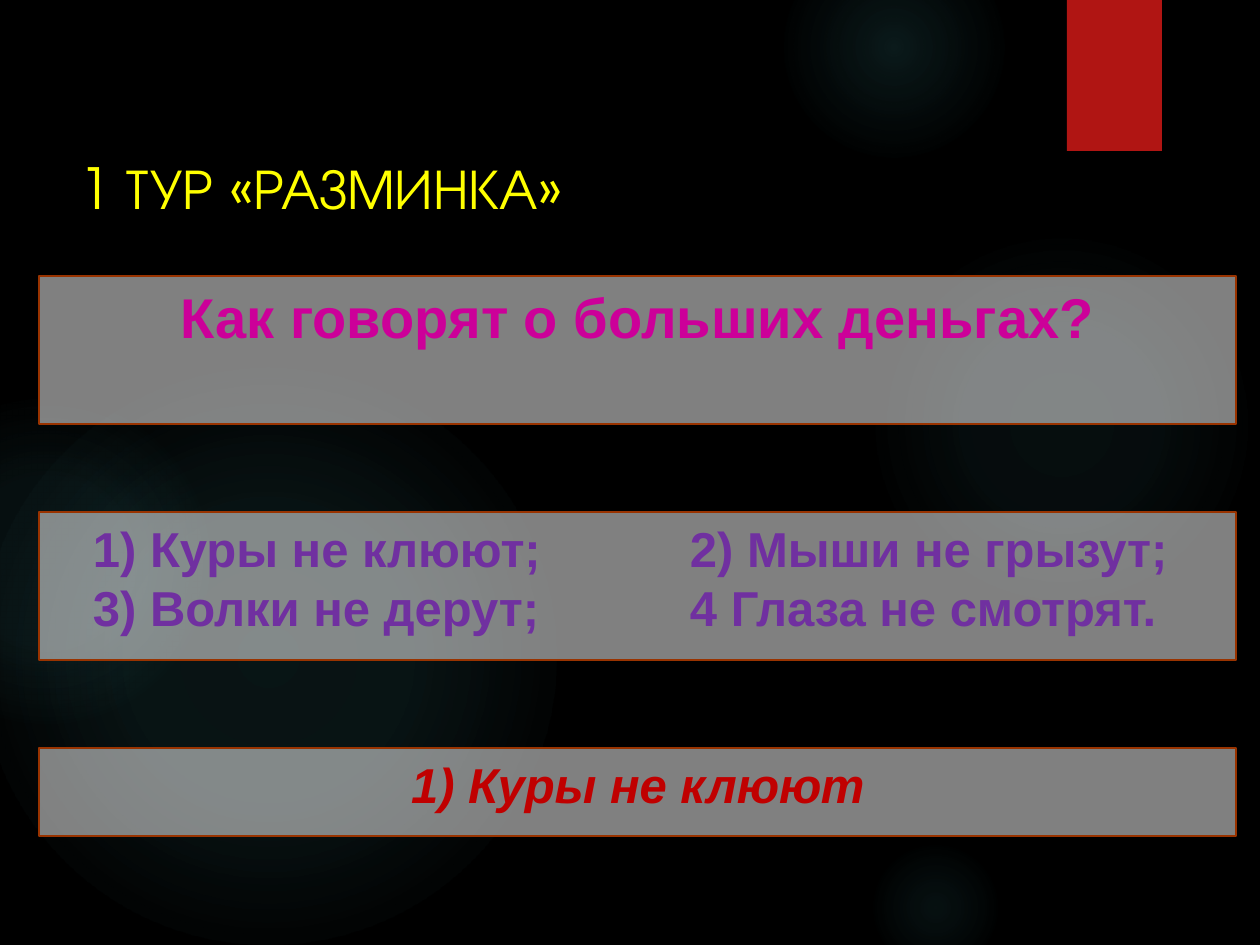
from typing import NamedTuple

from lxml import etree
from pptx import Presentation, util as u
from pptx.dml.color import RGBColor
from pptx.enum import shapes, text
from pptx.oxml.ns import qn

PX = u.Inches(1) // 126
PANEL_LEFT, PANEL_TOP, PANEL_WIDTH, PANEL_PITCH = 39, 276, 1197, 236
GLOW_COLOR = "50B9C1"


class Glow(NamedTuple):
    left: int
    top: int
    size: int
    stops: tuple[tuple[int, int], ...]  # (position %, opacity %)


class Panel(NamedTuple):
    lines: tuple[str, ...]
    height: int
    color: str
    size: int
    align: text.PP_ALIGN = text.PP_ALIGN.CENTER
    italic: bool = False
    inset: int = 13
    tab: int = 0


GLOWS = (
    Glow(868, 231, 388, ((0, 7), (36, 6), (69, 0))),
    Glow(784, -63, 220, ((0, 14), (36, 7), (73, 0))),
    Glow(868, 840, 136, ((0, 9), (36, 5), (66, 0))),
    Glow(-21, 368, 577, ((0, 11), (36, 10), (75, 0))),
    Glow(-116, 399, 325, ((0, 8), (36, 8), (72, 0))),
)
PANELS = (
    Panel(("Как говорят о больших деньгах?",), 148, "CC0099", 32),
    Panel(("1) Куры не клюют;\t2) Мыши не грызут;",
           "3) Волки не дерут;\t4 Глаза не смотрят."),
          148, "7030A0", 28, text.PP_ALIGN.LEFT, inset=54, tab=597),
    Panel(("1) Куры не клюют",), 88, "C00000", 28, italic=True),
)


def rgb(color: str) -> RGBColor:
    return RGBColor.from_string(color)


def add(parent, tag: str, **attributes):
    """Append a DrawingML child element."""
    values = {name: str(value) for name, value in attributes.items()}
    return etree.SubElement(parent, qn(f"a:{tag}"), values)


def add_color(parent, color: str, opacity: int) -> None:
    add(add(parent, "srgbClr", val=color), "alpha", val=opacity * 1000)


def add_shape(page, kind, left: int, top: int, width: int, height: int):
    shape = page.shapes.add_shape(
        kind, left * PX, top * PX, width * PX, height * PX)
    shape.shadow.inherit = False
    return shape


def draw_glow(page, glow: Glow) -> None:
    shape = add_shape(page, shapes.MSO_SHAPE.OVAL,
                      glow.left, glow.top, glow.size, glow.size)
    shape.line.fill.background()
    shape.fill.background()
    properties = shape._element.spPr
    gradient = etree.Element(qn("a:gradFill"), rotWithShape="1")
    stops = add(gradient, "gsLst")
    for position, opacity in glow.stops:
        add_color(add(stops, "gs", pos=position * 1000), GLOW_COLOR, opacity)
    center = add(gradient, "path", path="circle")
    add(center, "fillToRect", l=50000, t=50000, r=50000, b=50000)
    properties.replace(properties.find(qn("a:noFill")), gradient)


def draw_ribbon(page) -> None:
    ribbon = add_shape(page, shapes.MSO_SHAPE.RECTANGLE, 1067, 0, 95, 151)
    ribbon.fill.solid()
    ribbon.fill.fore_color.rgb = rgb("B01513")
    ribbon.line.fill.background()
    effects = ribbon._element.spPr.find(qn("a:effectLst"))
    shadow = add(effects, "outerShdw", blurRad=u.Pt(3), dist=u.Pt(2),
                 dir=90 * 60000, rotWithShape=0)
    add_color(shadow, "000000", 45)


def draw_title(page) -> None:
    box = page.shapes.add_textbox(67 * PX, 63 * PX, 973 * PX, 193 * PX)
    frame = box.text_frame
    frame.word_wrap = True
    frame.vertical_anchor = text.MSO_ANCHOR.BOTTOM
    frame.margin_bottom = 35 * PX
    para = frame.paragraphs[0]
    para.text = "1 ТУР «РАЗМИНКА»"
    para.font.name = "TeX Gyre Adventor"
    para.font.size = u.Pt(32.4)
    para.font.color.rgb = rgb("FFFF00")


def draw_panel(page, panel: Panel, top: int) -> None:
    box = add_shape(page, shapes.MSO_SHAPE.RECTANGLE,
                    PANEL_LEFT, top, PANEL_WIDTH, panel.height)
    box.fill.solid()
    box.fill.fore_color.rgb = rgb("FFFFFF")
    fill_color = box._element.spPr.find(qn("a:solidFill"))[0]
    add(fill_color, "alpha", val=50000)
    box.line.color.rgb = rgb("993300")
    box.line.width = u.Pt(0.75)

    frame = box.text_frame
    frame.word_wrap = True
    frame.vertical_anchor = text.MSO_ANCHOR.TOP
    frame.margin_left = panel.inset * PX
    for index, line in enumerate(panel.lines):
        para = frame.add_paragraph() if index else frame.paragraphs[0]
        para.text = line
        para.alignment = panel.align
        if panel.tab:
            tabs = etree.Element(qn("a:tabLst"))
            add(tabs, "tab", pos=panel.tab * PX, algn="l")
            para._p.get_or_add_pPr().insert(0, tabs)
        para.font.name = "Arial"
        para.font.size = u.Pt(panel.size)
        para.font.bold = True
        para.font.italic = panel.italic
        para.font.color.rgb = rgb(panel.color)


def main() -> None:
    deck = Presentation()
    deck.slide_width, deck.slide_height = 1260 * PX, 945 * PX
    page = deck.slides.add_slide(deck.slide_layouts[6])
    page.background.fill.solid()
    page.background.fill.fore_color.rgb = rgb("000000")
    for glow in GLOWS:
        draw_glow(page, glow)
    draw_ribbon(page)
    draw_title(page)
    for index, panel in enumerate(PANELS):
        draw_panel(page, panel, PANEL_TOP + index * PANEL_PITCH)
    deck.save("out.pptx")


if __name__ == "__main__":
    main()
